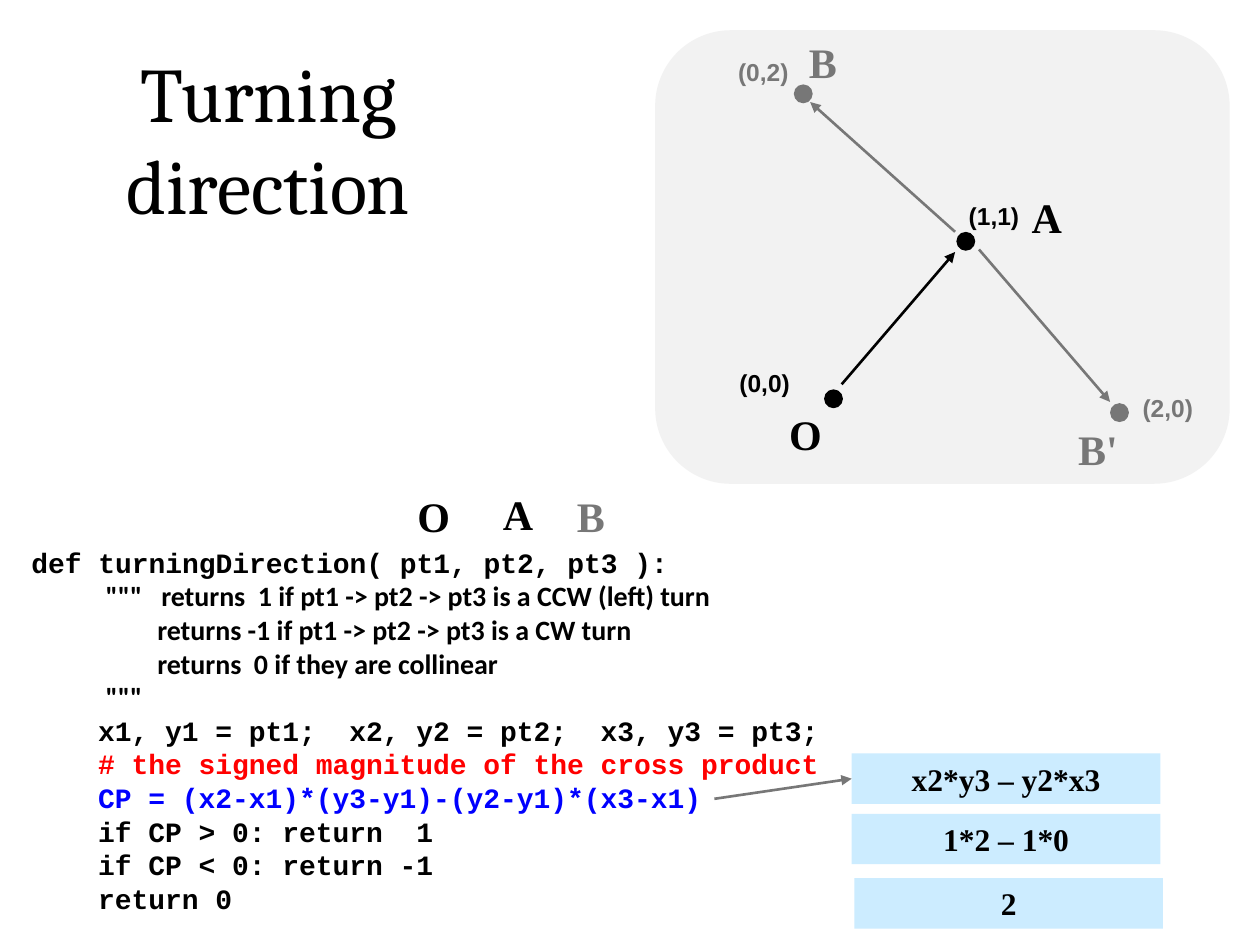
from dataclasses import dataclass

from lxml.etree import SubElement
from pptx import Presentation
from pptx.dml.color import RGBColor
from pptx.enum.shapes import MSO_CONNECTOR as Line, MSO_SHAPE as Shape
from pptx.enum.text import MSO_ANCHOR as Anchor, MSO_AUTO_SIZE as Fit, PP_ALIGN as Align
from pptx.oxml.ns import qn
from pptx.util import Inches, Pt


@dataclass(frozen=True)
class Theme:
    black: str = "000000"
    gray: str = "777777"
    panel: str = "F2F2F2"
    result: str = "CCECFF"
    red: str = "FF0000"
    blue: str = "0000FF"
    title_font: str = "Cambria"
    code_font: str = "Courier New"
    doc_font: str = "Calibri"
    name_font: str = "Times New Roman"
    coord_font: str = "Arial"
    title_size: int = 44
    name_size: int = 24
    result_size: int = 18
    code_size: int = 16
    coord_size: int = 14
    line_width: float = 1.5


THEME = Theme()
DOT = 0.15
CODE_INDENT, DOC_INDENT, DOC_TEXT_INDENT = 0.53, 0.59, 1.0


def add_span(para, text, font, size, color, bold=True):
    span = para.add_run()
    span.text = text
    span.font.name = font
    span.font.size = Pt(size)
    span.font.bold = bold
    span.font.color.rgb = RGBColor.from_string(color)


def add_box(page, left, top, width, height, wrap=True):
    box = page.shapes.add_textbox(Inches(left), Inches(top), Inches(width), Inches(height))
    box.text_frame.word_wrap = wrap
    box.text_frame.auto_size = Fit.SHAPE_TO_FIT_TEXT
    return box.text_frame


def add_filled(page, kind, left, top, width, height, color):
    shape = page.shapes.add_shape(kind, Inches(left), Inches(top), Inches(width), Inches(height))
    shape.shadow.inherit = False
    shape.fill.solid()
    shape.fill.fore_color.rgb = RGBColor.from_string(color)
    shape.line.fill.background()
    return shape


def add_title(page, text):
    para = add_box(page, 0.42, 0.31, 3.42, 1.58).paragraphs[0]
    para.alignment = Align.CENTER
    add_span(para, text, THEME.title_font, THEME.title_size, THEME.black, bold=False)


def add_name(page, text, left, top, color, width=1.0, align=Align.RIGHT):
    para = add_box(page, left, top, width, 0.5).paragraphs[0]
    para.alignment = align
    add_span(para, text, THEME.name_font, THEME.name_size, color)


def add_coordinate(page, text, left, top, color):
    para = add_box(page, left, top, 0.6, 0.34, wrap=False).paragraphs[0]
    add_span(para, text, THEME.coord_font, THEME.coord_size, color)


def add_arrow(page, start, end, color):
    arrow = page.shapes.add_connector(Line.STRAIGHT, *(Inches(n) for n in (*start, *end)))
    arrow.line.width = Pt(THEME.line_width)
    arrow.line.color.rgb = RGBColor.from_string(color)
    SubElement(arrow.line._get_or_add_ln(), qn("a:tailEnd"), type="triangle")
    SubElement(arrow._element.spPr, qn("a:effectLst"))
    return arrow


def add_result(page, text, left, top):
    box = add_filled(page, Shape.RECTANGLE, left, top, 2.45, 0.4, THEME.result)
    box.text_frame.word_wrap = True
    box.text_frame.vertical_anchor = Anchor.MIDDLE
    para = box.text_frame.paragraphs[0]
    para.alignment = Align.CENTER
    add_span(para, text, THEME.name_font, THEME.result_size, THEME.black)
    return box


def add_code(page, lines):
    frame = add_box(page, 0.15, 4.28, 6.55, 3.06, wrap=False)
    for number, (text, indent, font, color) in enumerate(lines):
        para = frame.add_paragraph() if number else frame.paragraphs[0]
        para._p.get_or_add_pPr().set("marL", str(Inches(indent)))
        add_span(para, text, font, THEME.code_size, color)


def main():
    deck = Presentation()
    deck.slide_width, deck.slide_height = Inches(10), Inches(7.5)
    page = deck.slides.add_slide(deck.slide_layouts[6])
    black, gray = THEME.black, THEME.gray

    # Diagram panel and title
    add_filled(page, Shape.ROUNDED_RECTANGLE, 5.2, 0.24, 4.56, 3.6, THEME.panel)
    add_title(page, "Turning direction")

    # Function listing
    code, doc = THEME.code_font, THEME.doc_font
    add_code(page, [
        ("def turningDirection( pt1, pt2, pt3 ):", 0, code, black),
        ('"""   returns  1 if pt1 -> pt2 -> pt3 is a CCW (left) turn', DOC_INDENT, doc, black),
        ("returns -1 if pt1 -> pt2 -> pt3 is a CW turn", DOC_TEXT_INDENT, doc, black),
        ("returns  0 if they are collinear", DOC_TEXT_INDENT, doc, black),
        ('"""', DOC_INDENT, doc, black),
        ("x1, y1 = pt1;  x2, y2 = pt2;  x3, y3 = pt3;", CODE_INDENT, code, black),
        ("# the signed magnitude of the cross product", CODE_INDENT, code, THEME.red),
        ("CP = (x2-x1)*(y3-y1)-(y2-y1)*(x3-x1)", CODE_INDENT, code, THEME.blue),
        ("if CP > 0: return  1", CODE_INDENT, code, black),
        ("if CP < 0: return -1", CODE_INDENT, code, black),
        ("return 0", CODE_INDENT, code, black),
    ])

    # Points with their coordinates
    for dot, coordinate, place, color in [
        ((6.54, 3.09), "(0,0)", (5.77, 2.87), black),
        ((7.59, 1.84), "(1,1)", (7.59, 1.55), black),
        ((6.3, 0.67), "(0,2)", (5.76, 0.4), gray),
        ((8.81, 3.2), "(2,0)", (8.97, 3.07), gray),
    ]:
        add_filled(page, Shape.OVAL, *dot, DOT, DOT, color)
        add_coordinate(page, coordinate, *place, color)

    # Point names in the diagram, then above the parameters
    add_name(page, "O", 5.62, 3.19, black)
    add_name(page, "A", 8.09, 1.47, black, 0.5, Align.LEFT)
    add_name(page, "B", 5.74, 0.24, gray)
    add_name(page, "B'", 7.97, 3.31, gray)
    add_name(page, "O", 2.67, 3.84, black)
    add_name(page, "A", 3.83, 3.83, black, 0.5)
    add_name(page, "B", 3.9, 3.84, gray)

    # Turns
    add_arrow(page, (6.68, 3.05), (7.58, 2), black)
    add_arrow(page, (7.58, 1.84), (6.43, 0.81), gray)
    add_arrow(page, (7.77, 1.98), (8.81, 3.19), gray)

    # Worked cross product
    formula = add_result(page, "x2*y3 – y2*x3", 6.76, 5.98)
    add_result(page, "1*2 – 1*0", 6.76, 6.46)
    add_result(page, "2", 6.78, 6.97)
    add_arrow(page, (5.67, 6.34), (6.76, 6.18), gray).end_connect(formula, 1)

    deck.save("out.pptx")


if __name__ == "__main__":
    main()
